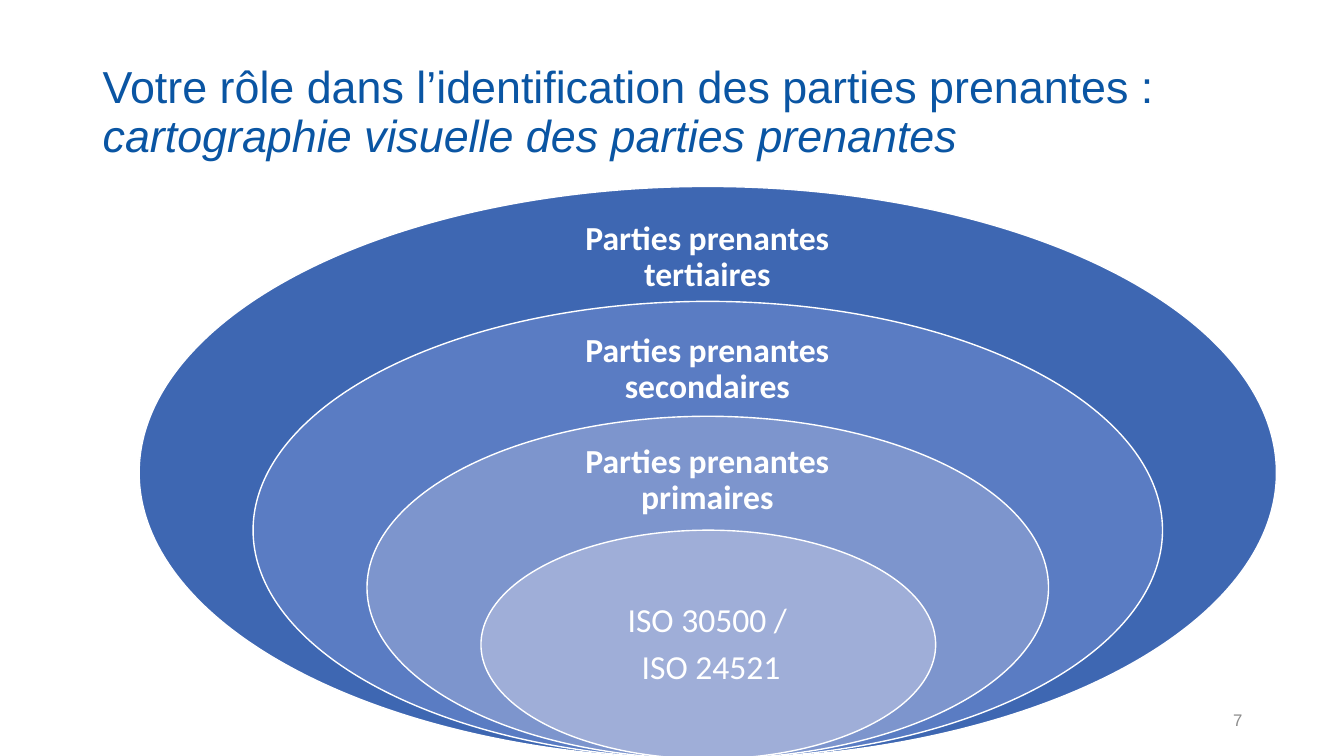
"""Build the slide of nested stakeholder ellipses."""
import pptx
import pptx.util
import pptx.dml.color
import pptx.enum.shapes
import pptx.enum.text

PX = 9144
ALIGN = pptx.enum.text.PP_ALIGN


def rgb(code):
    return pptx.dml.color.RGBColor.from_string(code)


def label(box, lines, size, font, color, align, pad=(10, 5), bold=False):
    left, top, width, height = box
    frame = slide.shapes.add_textbox(left * PX, top * PX, width * PX, height * PX).text_frame
    frame.word_wrap = True
    frame.vertical_anchor = pptx.enum.text.MSO_ANCHOR.MIDDLE
    frame.margin_left = frame.margin_right = pad[0] * PX
    frame.margin_top = frame.margin_bottom = pad[1] * PX
    for i, line in enumerate(lines):
        para = frame.add_paragraph() if i else frame.paragraphs[0]
        para.alignment = align
        para.line_spacing = 0.9
        run = para.add_run()
        run.text = line
        run.font.size = pptx.util.Pt(size)
        run.font.name = font
        run.font.bold = bold
        run.font.color.rgb = rgb(color)
    return frame


deck = pptx.Presentation()
deck.slide_width = 1333 * PX
deck.slide_height = 750 * PX
slide = deck.slides.add_slide(deck.slide_layouts[6])

title = label((92, 40, 1150, 145),
              ["Votre rôle dans l’identification des parties prenantes :",
               "cartographie visuelle des parties prenantes"],
              32, "Arial", "0A55A3", ALIGN.LEFT)
title.paragraphs[1].runs[0].font.italic = True

label((942, 695, 300, 40), ["7"], 12, "Arial", "8C8C8C", ALIGN.RIGHT)

rings = [
    ("3E67B2", (544, 213, 315, 85), ["Parties prenantes tertiaires"]),
    ("5A7CC3", (544, 326, 315, 82), ["Parties prenantes secondaires"]),
    ("7D95CD", (544, 438, 315, 77), ["Parties prenantes primaires"]),
    ("9FAED8", (542, 583, 319, 114), ["ISO 30500 /", " ISO 24521"]),
]
MID, BASE = 702, 753
for i, (fill, box, lines) in enumerate(rings):
    width = 1128 * (5 - i) // 5
    height = 568 * (5 - i) // 5
    oval = slide.shapes.add_shape(pptx.enum.shapes.MSO_SHAPE.OVAL,
                                  (MID - width // 2) * PX, (BASE - height) * PX,
                                  width * PX, height * PX)
    oval.shadow.inherit = False
    oval.fill.solid()
    oval.fill.fore_color.rgb = rgb(fill)
    oval.line.color.rgb = rgb("FFFFFF")
    oval.line.width = pptx.util.Pt(1)
    frame = label(box, lines, 24, "Calibri", "FFFFFF", ALIGN.CENTER, (19, 19), len(lines) == 1)
    for para in frame.paragraphs:
        para.space_after = pptx.util.Pt(8)

deck.save("out.pptx")
